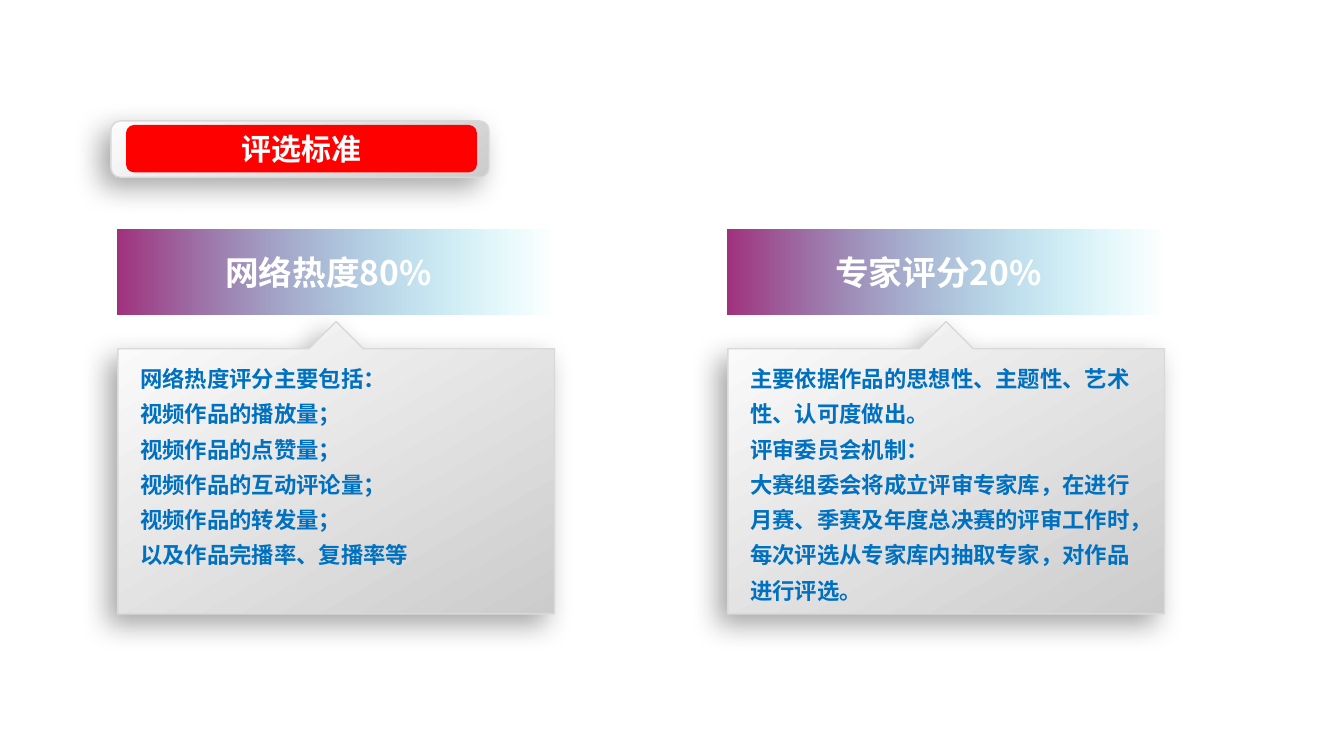
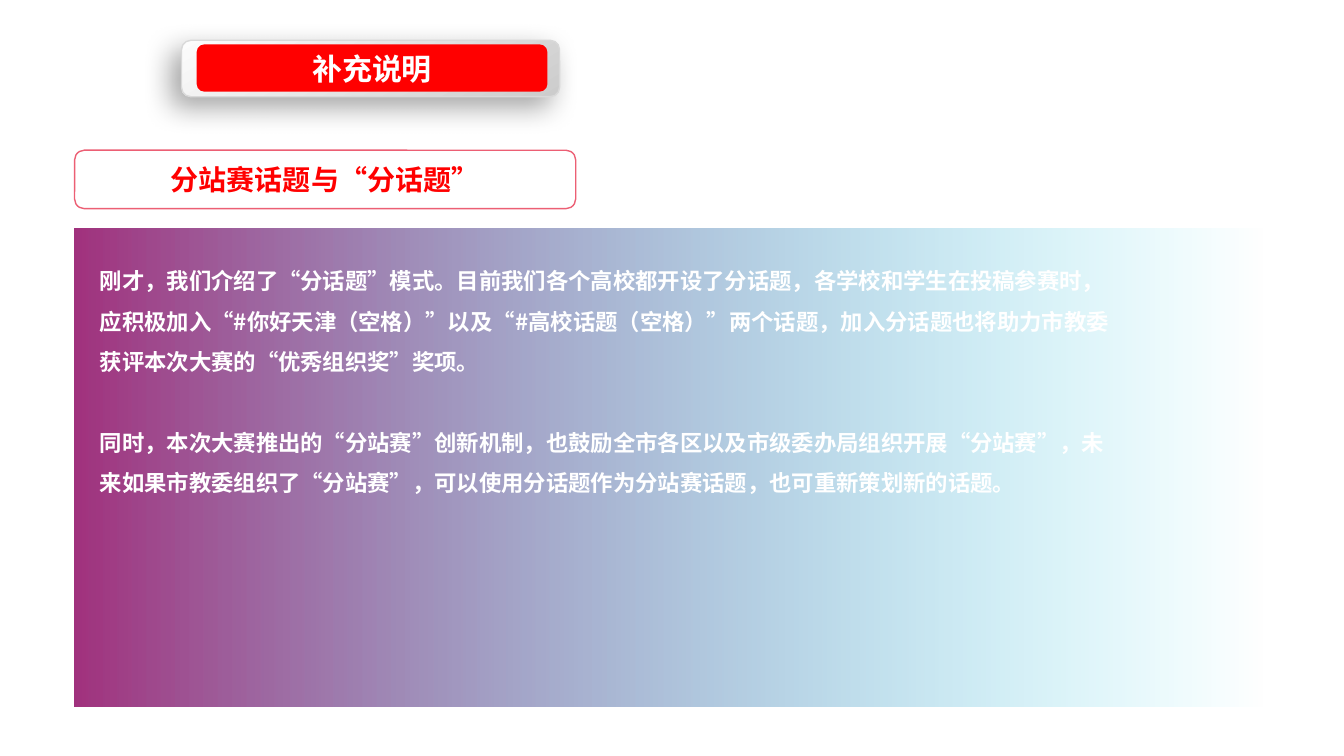
from dataclasses import dataclass

from lxml.etree import SubElement
from pptx import Presentation
from pptx.dml.color import RGBColor
from pptx.enum.shapes import MSO_SHAPE
from pptx.enum.text import MSO_ANCHOR, PP_ALIGN
from pptx.oxml.ns import qn
from pptx.shapes.autoshape import Shape
from pptx.slide import Slide
from pptx.util import Inches, Pt

FONT = "Noto Sans CJK SC"
WHITE, RED, BLUE = "FFFFFF", "FF0000", "0070C0"
PURPLE, CYAN = "A1327E", "18D8EF"
GREY, PALE, EDGE, ROSE = "CCCCCC", "FCFCFC", "D9D9D9", "EC5F74"


@dataclass(frozen=True)
class Box:
    left: float
    top: float
    width: float
    height: float


@dataclass(frozen=True)
class TextStyle:
    size: float
    color: str
    align: PP_ALIGN = PP_ALIGN.CENTER
    anchor: MSO_ANCHOR = MSO_ANCHOR.MIDDLE
    insets: tuple[float, float, float, float] = (0.1, 0.05, 0.1, 0.05)
    line_pitch: float | None = None
    paragraph_gap: float = 0


@dataclass(frozen=True)
class Criterion:
    left: float
    heading: str
    details: list[str]


TITLE = TextStyle(21.4, WHITE)
SUBTITLE = TextStyle(20, RED)
HEADING = TextStyle(24, WHITE, insets=(0.1, 0.05, 0.25, 0.05))
DETAILS = TextStyle(16, BLUE, PP_ALIGN.LEFT, MSO_ANCHOR.TOP,
                    (0.22, 0.08, 0.17, 0), 25.2)
EXPLANATION = TextStyle(16, WHITE, PP_ALIGN.LEFT, MSO_ANCHOR.TOP,
                        (0.25, 0.25, 1.43, 0.05), 28.8, 28.8)

CRITERIA = [
    Criterion(1.17, "网络热度80%", [
        "网络热度评分主要包括：",
        "视频作品的播放量；",
        "视频作品的点赞量；",
        "视频作品的互动评论量；",
        "视频作品的转发量；",
        "以及作品完播率、复播率等",
    ]),
    Criterion(7.22, "专家评分20%", [
        "主要依据作品的思想性、主题性、艺术性、认可度做出。",
        "评审委员会机制：",
        "大赛组委会将成立评审专家库，在进行月赛、季赛及年度总决赛的评审工作时，"
        "每次评选从专家库内抽取专家，对作品进行评选。",
    ]),
]

TOPIC_NOTES = [
    "刚才，我们介绍了“分话题”模式。目前我们各个高校都开设了分话题，各学校和学生在投稿参赛时，"
    "应积极加入“#你好天津（空格）”以及“#高校话题（空格）”两个话题，"
    "加入分话题也将助力市教委获评本次大赛的“优秀组织奖”奖项。",
    "同时，本次大赛推出的“分站赛”创新机制，也鼓励全市各区以及市级委办局组织开展“分站赛”，"
    "未来如果市教委组织了“分站赛”，可以使用分话题作为分站赛话题，也可重新策划新的话题。",
]


def rgb(color: str) -> RGBColor:
    return RGBColor.from_string(color)


def add_panel(slide: Slide, kind: MSO_SHAPE, box: Box,
              fill: str | None = None, line: str | None = None) -> Shape:
    panel = slide.shapes.add_shape(kind, Inches(box.left), Inches(box.top),
                                   Inches(box.width), Inches(box.height))
    panel.shadow.inherit = False
    if fill:
        panel.fill.solid()
        panel.fill.fore_color.rgb = rgb(fill)
    if line:
        panel.line.color.rgb = rgb(line)
        panel.line.width = Pt(1)
    else:
        panel.line.fill.background()
    return panel


def fill_gradient(panel: Shape, start: str, end: str, angle: float) -> None:
    panel.fill.gradient()
    panel.fill.gradient_angle = angle
    for stop, color in zip(panel.fill.gradient_stops, (start, end)):
        stop.color.rgb = rgb(color)


def add_raised_panel(slide: Slide, kind: MSO_SHAPE, box: Box) -> Shape:
    """Add a silver panel with a soft shadow to the lower left."""
    panel = add_panel(slide, kind, box, line=EDGE)
    fill_gradient(panel, GREY, PALE, 120)
    effects = panel._element.spPr.find(qn("a:effectLst"))
    shadow = SubElement(effects, qn("a:outerShdw"), blurRad=str(Pt(20)),
                        dist=str(Pt(10)), dir=str(136 * 60000),
                        algn="tr", rotWithShape="0")
    color = SubElement(shadow, qn("a:srgbClr"), val="000000")
    SubElement(color, qn("a:alpha"), val="34000")
    return panel


def add_fading_band(slide: Slide, box: Box) -> Shape:
    """Add a purple band that fades to full transparency on the right."""
    band = add_panel(slide, MSO_SHAPE.RECTANGLE, box)
    fill_gradient(band, PURPLE, CYAN, 0)
    end_color = band._element.spPr.findall(f".//{qn('a:srgbClr')}")[-1]
    SubElement(end_color, qn("a:alpha"), val="0")
    return band


def write(panel: Shape, paragraphs: list[str], style: TextStyle) -> None:
    frame = panel.text_frame
    frame.word_wrap = True
    frame.vertical_anchor = style.anchor
    (frame.margin_left, frame.margin_top,
     frame.margin_right, frame.margin_bottom) = map(Inches, style.insets)
    for index, text in enumerate(paragraphs):
        paragraph = frame.add_paragraph() if index else frame.paragraphs[0]
        paragraph.text = text
        paragraph.alignment = style.align
        if style.line_pitch:
            paragraph.line_spacing = Pt(style.line_pitch)
        if index and style.paragraph_gap:
            paragraph.space_before = Pt(style.paragraph_gap)
        font = paragraph.font
        font.size = Pt(style.size)
        font.bold = True
        font.color.rgb = rgb(style.color)
        font.name = FONT
        properties = paragraph._p.pPr.find(qn("a:defRPr"))
        SubElement(properties, qn("a:ea"), typeface=FONT)


def add_title(slide: Slide, text: str, left: float, top: float) -> None:
    add_raised_panel(slide, MSO_SHAPE.ROUNDED_RECTANGLE,
                     Box(left, top, 3.75, 0.56))
    label = add_panel(slide, MSO_SHAPE.ROUNDED_RECTANGLE,
                      Box(left + 0.15, top + 0.04, 3.48, 0.47), RED)
    write(label, [text], TITLE)


def add_criterion(slide: Slide, criterion: Criterion) -> None:
    band = add_fading_band(slide, Box(criterion.left, 2.28, 4.33, 0.84))
    write(band, [criterion.heading], HEADING)
    callout = add_raised_panel(slide, MSO_SHAPE.UP_ARROW_CALLOUT,
                               Box(criterion.left, 3.19, 4.33, 2.9))
    for index, value in enumerate((0.186, 0.093, 0.093, 0.907)):
        callout.adjustments[index] = value
    write(callout, criterion.details, DETAILS)


def build_criteria(slide: Slide) -> None:
    add_title(slide, "评选标准", 1.1, 1.2)
    for criterion in CRITERIA:
        add_criterion(slide, criterion)


def build_topic_notes(slide: Slide) -> None:
    add_title(slide, "补充说明", 1.8, 0.4)
    subtitle = add_panel(slide, MSO_SHAPE.ROUNDED_RECTANGLE,
                         Box(0.74, 1.49, 4.97, 0.58), WHITE, ROSE)
    write(subtitle, ["分站赛话题与“分话题”"], SUBTITLE)
    explanation = add_fading_band(slide, Box(0.74, 2.27, 11.84, 4.74))
    write(explanation, TOPIC_NOTES, EXPLANATION)


def main() -> None:
    deck = Presentation()
    deck.slide_width, deck.slide_height = Inches(13.33), Inches(7.5)
    blank = deck.slide_layouts[6]
    for build in (build_criteria, build_topic_notes):
        build(deck.slides.add_slide(blank))
    deck.save("out.pptx")


if __name__ == "__main__":
    main()
